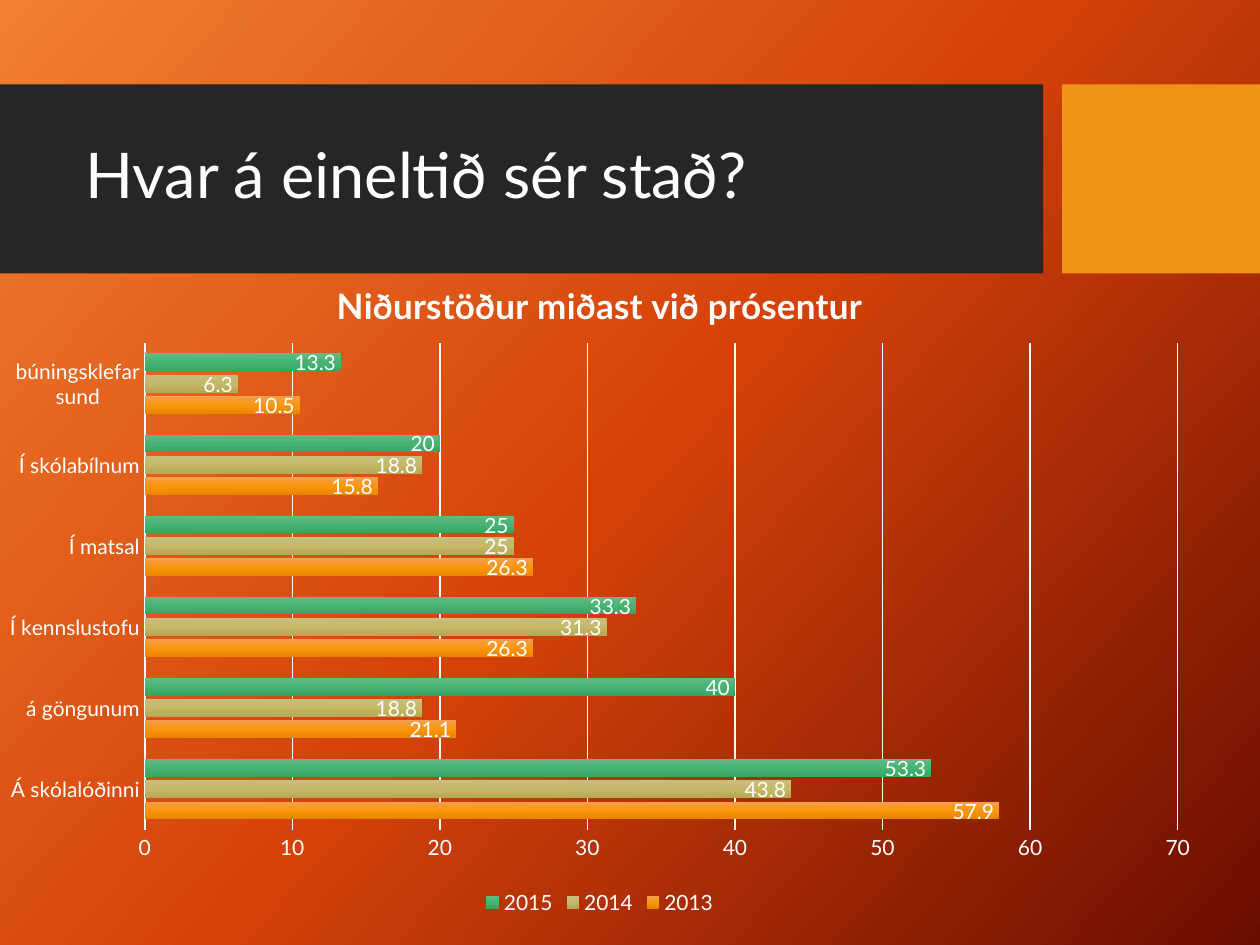
from copy import deepcopy

from pptx import Presentation
from pptx.chart.data import CategoryChartData
from pptx.dml.color import RGBColor
from pptx.enum.chart import XL_CHART_TYPE, XL_LABEL_POSITION, XL_LEGEND_POSITION, XL_TICK_MARK
from pptx.enum.shapes import MSO_SHAPE
from pptx.enum.text import MSO_ANCHOR, PP_ALIGN
from pptx.oxml import parse_xml
from pptx.oxml.ns import nsdecls, qn
from pptx.util import Inches, Pt

BAR_CLUSTERED = XL_CHART_TYPE.BAR_CLUSTERED
INSIDE_END = XL_LABEL_POSITION.INSIDE_END
LEGEND_BOTTOM = XL_LEGEND_POSITION.BOTTOM
NO_TICK = XL_TICK_MARK.NONE
RECTANGLE = MSO_SHAPE.RECTANGLE
MIDDLE = MSO_ANCHOR.MIDDLE
LEFT = PP_ALIGN.LEFT

FONT = "Lato"
WHITE = "FFFFFF"
BACKGROUND = ["F18031", "D54209", "6A0D00"]
BANNER = [(0, 8.28, "262626"), (8.43, 1.57, "F09415")]
CATEGORIES = ["Á skólalóðinni", "á göngunum", "Í kennslustofu", "Í matsal",
              "Í skólabílnum", "búningsklefar sund"]
SERIES = [
    ("2013", [57.9, 21.1, 26.3, 26.3, 15.8, 10.5], ["F4A050", "FB960A", "E88600"]),
    ("2014", [43.8, 18.8, 31.3, 25, 18.8, 6.3], ["C8BE7F", "C5B867", "B4A756"]),
    ("2015", [53.3, 40, 33.3, 25, 20, 13.3], ["67B884", "46B472", "3AA464"]),
]
PLOT_AREA = {"x": 0.13, "y": 0.135, "w": 0.84, "h": 0.73}


def color(value):
    """Return the colour for a hex string."""
    return RGBColor.from_string(value)


class SlideBuilder:
    """Hold the style and the current slide."""

    def __init__(self, slide):
        """Keep the slide to draw on."""
        self.slide = slide

    def style_font(self, font, size, bold=False):
        """Apply the common typeface and colour."""
        values = {"name": FONT, "size": Pt(size), "bold": bold}
        for name, value in values.items():
            setattr(font, name, value)
        font.color.rgb = color(WHITE)

    def gradient(self, fill, element, colors, angle):
        """Fill with evenly spaced stops at a clockwise angle."""
        fill.gradient()
        fill.gradient_angle = 360 - angle
        stops = element.find(".//" + qn("a:gsLst"))
        stops.insert(1, deepcopy(stops[0]))
        for index, (stop, value) in enumerate(zip(fill.gradient_stops, colors)):
            stop.color.rgb = color(value)
            stop.position = index / (len(colors) - 1)

    def background(self):
        """Paint the slide background."""
        self.gradient(self.slide.background.fill, self.slide.element, BACKGROUND, 42)

    def rectangle(self, left, top, width, height, fill):
        """Add a plain rectangle."""
        shape = self.slide.shapes.add_shape(
            RECTANGLE, Inches(left), Inches(top), Inches(width), Inches(height))
        shape.shadow.inherit = False
        shape.fill.solid()
        shape.fill.fore_color.rgb = color(fill)
        shape.line.fill.background()

    def title(self, text, left, top, width, height):
        """Place the title in front of the banner."""
        title = self.slide.shapes.title
        place = {"left": left, "top": top, "width": width, "height": height}
        for name, value in place.items():
            setattr(title, name, Inches(value))
        self.slide.shapes.element.append(title.element)
        title.text_frame.text = text
        title.text_frame.vertical_anchor = MIDDLE
        paragraph = title.text_frame.paragraphs[0]
        paragraph.alignment = LEFT
        paragraph.line_spacing = 0.9
        self.style_font(paragraph.runs[0].font, 36)

    def chart(self, text, left, top, width, height):
        """Add the clustered bar chart."""
        data = CategoryChartData()
        data.categories = CATEGORIES
        for name, values, _ in SERIES:
            data.add_series(name, values)
        chart = self.slide.shapes.add_chart(
            BAR_CLUSTERED, Inches(left), Inches(top), Inches(width), Inches(height), data).chart
        self.style_font(chart.font, 12)
        chart.has_title = True
        chart.chart_title.text_frame.text = text
        self.style_font(chart.chart_title.text_frame.paragraphs[0].runs[0].font, 20, True)
        chart.has_legend = True
        chart.legend.position = LEGEND_BOTTOM
        chart.legend.include_in_layout = False
        self.style_font(chart.legend.font, 12)
        self.axes(chart)
        self.bars(chart.plots[0])
        self.plot_layout(chart)

    def axes(self, chart):
        """Format both axes and the gridlines."""
        for axis in (chart.category_axis, chart.value_axis):
            axis.major_tick_mark = axis.minor_tick_mark = NO_TICK
            self.style_font(axis.tick_labels.font, 12)
        lines = [(chart.category_axis.format.line, 1),
                 (chart.value_axis.major_gridlines.format.line, 0.75)]
        for line, width in lines:
            line.color.rgb = color(WHITE)
            line.width = Pt(width)
        values = chart.value_axis
        values.format.line.fill.background()
        values.minimum_scale, values.maximum_scale, values.major_unit = 0, 70, 10

    def bars(self, plot):
        """Format the series and their labels."""
        plot.gap_width = 115
        plot.overlap = -20
        plot.vary_by_categories = False
        for series, (_, _, colors) in zip(plot.series, SERIES):
            series.invert_if_negative = False
            self.gradient(series.format.fill, series._element, colors, 90)
            labels = series.data_labels
            labels.show_value = True
            labels.position = INSIDE_END
            self.style_font(labels.font, 12)

    def plot_layout(self, chart):
        """Fix the inner plot area as fractions of the chart."""
        area = chart.element.find(".//" + qn("c:plotArea"))
        for layout in area.findall(qn("c:layout")):
            area.remove(layout)
        sizes = "".join(f'<c:{key} val="{value}"/>' for key, value in PLOT_AREA.items())
        area.insert(0, parse_xml(
            f'<c:layout {nsdecls("c")}><c:manualLayout><c:layoutTarget val="inner"/>'
            f'<c:xMode val="edge"/><c:yMode val="edge"/>{sizes}</c:manualLayout></c:layout>'))


def main():
    """Build and save the presentation."""
    presentation = Presentation()
    presentation.slide_width, presentation.slide_height = Inches(10), Inches(7.5)
    builder = SlideBuilder(presentation.slides.add_slide(presentation.slide_layouts[5]))
    builder.background()
    for left, width, fill in BANNER:
        builder.rectangle(left, 0.67, width, 1.5, fill)
    builder.title("Hvar á eineltið sér stað?", 0.58, 0.82, 7.54, 1.18)
    builder.chart("Niðurstöður miðast við prósentur", -0.12, 2.01, 9.76, 5.29)
    presentation.save("out.pptx")


if __name__ == "__main__":
    main()
